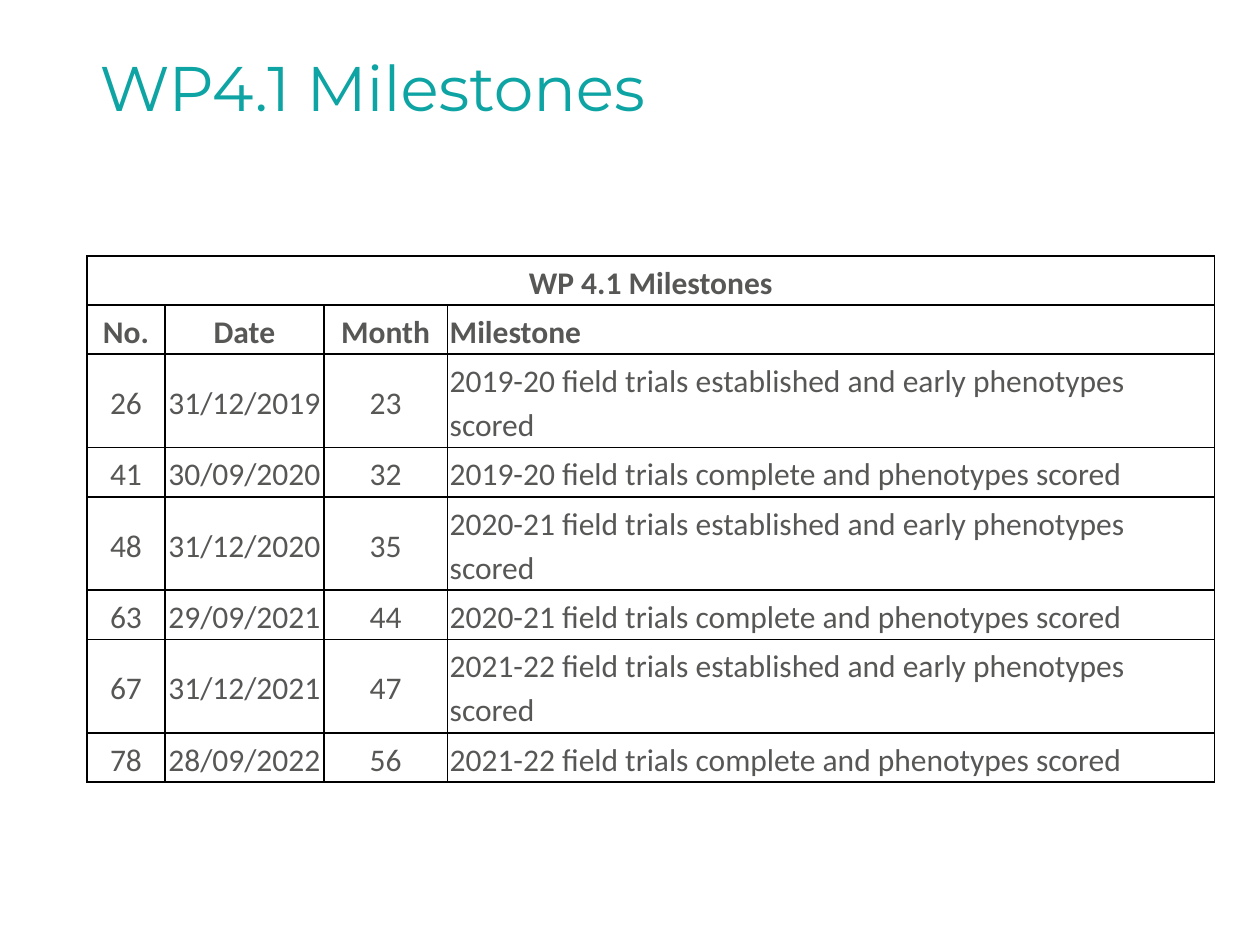
from dataclasses import dataclass

import pptx
import pptx.dml.color
import pptx.enum.text
import pptx.oxml
import pptx.oxml.ns
import pptx.util
from pptx.util import Pt


@dataclass(frozen=True)
class Theme:
    title_font: str = "Montserrat"
    body_font: str = "Calibri"
    title_size: float = 36
    body_size: float = 18
    title_color: str = "0DA4A3"
    text_color: str = "575756"
    border_color: str = "000000"
    border_width: float = 1


@dataclass(frozen=True)
class Box:
    left: float
    top: float
    width: float
    height: float


THEME = Theme()
TABLE_HEADING = "WP 4.1 Milestones"
COLUMN_NAMES = ("No.", "Date", "Month", "Milestone")
COLUMN_SHARES = (0.62, 1.26, 0.98, 6.09)
MILESTONES = (
    ("26", "31/12/2019", "23", "2019-20 field trials established and early phenotypes scored"),
    ("41", "30/09/2020", "32", "2019-20 field trials complete and phenotypes scored"),
    ("48", "31/12/2020", "35", "2020-21 field trials established and early phenotypes scored"),
    ("63", "29/09/2021", "44", "2020-21 field trials complete and phenotypes scored"),
    ("67", "31/12/2021", "47", "2021-22 field trials established and early phenotypes scored"),
    ("78", "28/09/2022", "56", "2021-22 field trials complete and phenotypes scored"),
)
ROW_HEIGHT = 14.4
CELL_INSET = 1.44


def add_run(paragraph, text, font_name, size, color, bold=False):
    run = paragraph.add_run()
    run.text = text
    run.font.name = font_name
    run.font.size = Pt(size)
    run.font.bold = bold
    run.font.color.rgb = pptx.dml.color.RGBColor.from_string(color)


def add_borders(cell):
    properties = cell._tc.get_or_add_tcPr()
    for index, side in enumerate(("lnL", "lnR", "lnT", "lnB")):
        line = pptx.oxml.parse_xml(
            f'<a:{side} {pptx.oxml.ns.nsdecls("a")} w="{Pt(THEME.border_width)}">'
            f'<a:solidFill><a:srgbClr val="{THEME.border_color}"/></a:solidFill>'
            f"</a:{side}>"
        )
        properties.insert(index, line)


def format_cell(cell):
    cell.fill.background()
    cell.vertical_anchor = pptx.enum.text.MSO_ANCHOR.MIDDLE
    cell.margin_left = cell.margin_right = Pt(CELL_INSET)
    cell.margin_top = cell.margin_bottom = Pt(CELL_INSET)
    add_borders(cell)


def write_cell(cell, text, alignment, bold):
    paragraph = cell.text_frame.paragraphs[0]
    paragraph.alignment = alignment
    paragraph.line_spacing = 1.15
    add_run(paragraph, text, THEME.body_font, THEME.body_size, THEME.text_color, bold)


def place_title(slide, box, text):
    title = slide.shapes.title
    title.left, title.top = Pt(box.left), Pt(box.top)
    title.width, title.height = Pt(box.width), Pt(box.height)
    frame = title.text_frame
    frame.word_wrap = True
    frame.auto_size = pptx.enum.text.MSO_AUTO_SIZE.NONE
    frame.vertical_anchor = pptx.enum.text.MSO_ANCHOR.TOP
    paragraph = frame.paragraphs[0]
    paragraph.alignment = pptx.enum.text.PP_ALIGN.LEFT
    paragraph.line_spacing = 0.9
    add_run(paragraph, text, THEME.title_font, THEME.title_size, THEME.title_color)


def place_milestone_table(slide, box):
    rows = (COLUMN_NAMES, *MILESTONES)
    table = slide.shapes.add_table(
        len(rows) + 1, len(COLUMN_NAMES),
        Pt(box.left), Pt(box.top), Pt(box.width), Pt(box.height),
    ).table
    table.first_row = table.horz_banding = False
    for column, share in zip(table.columns, COLUMN_SHARES):
        column.width = Pt(box.width * share / sum(COLUMN_SHARES))
    for row in table.rows:
        row.height = Pt(ROW_HEIGHT)
    for cell in table.iter_cells():
        format_cell(cell)

    center = pptx.enum.text.PP_ALIGN.CENTER
    left = pptx.enum.text.PP_ALIGN.LEFT
    heading = table.cell(0, 0)
    heading.merge(table.cell(0, len(COLUMN_NAMES) - 1))
    write_cell(heading, TABLE_HEADING, center, True)
    for row_index, values in enumerate(rows, start=1):
        for column_index, (name, text) in enumerate(zip(COLUMN_NAMES, values)):
            alignment = left if name == "Milestone" else center
            write_cell(table.cell(row_index, column_index), text, alignment, row_index == 1)


def main():
    presentation = pptx.Presentation()
    presentation.slide_width = Pt(720)
    presentation.slide_height = Pt(540)
    slide = presentation.slides.add_slide(presentation.slide_layouts[5])
    place_title(slide, Box(49.68, 28.8, 620.64, 104.4), "WP4.1 Milestones")
    place_milestone_table(slide, Box(49.68, 146.16, 644.4, 295.92))
    presentation.save("out.pptx")


if __name__ == "__main__":
    main()
